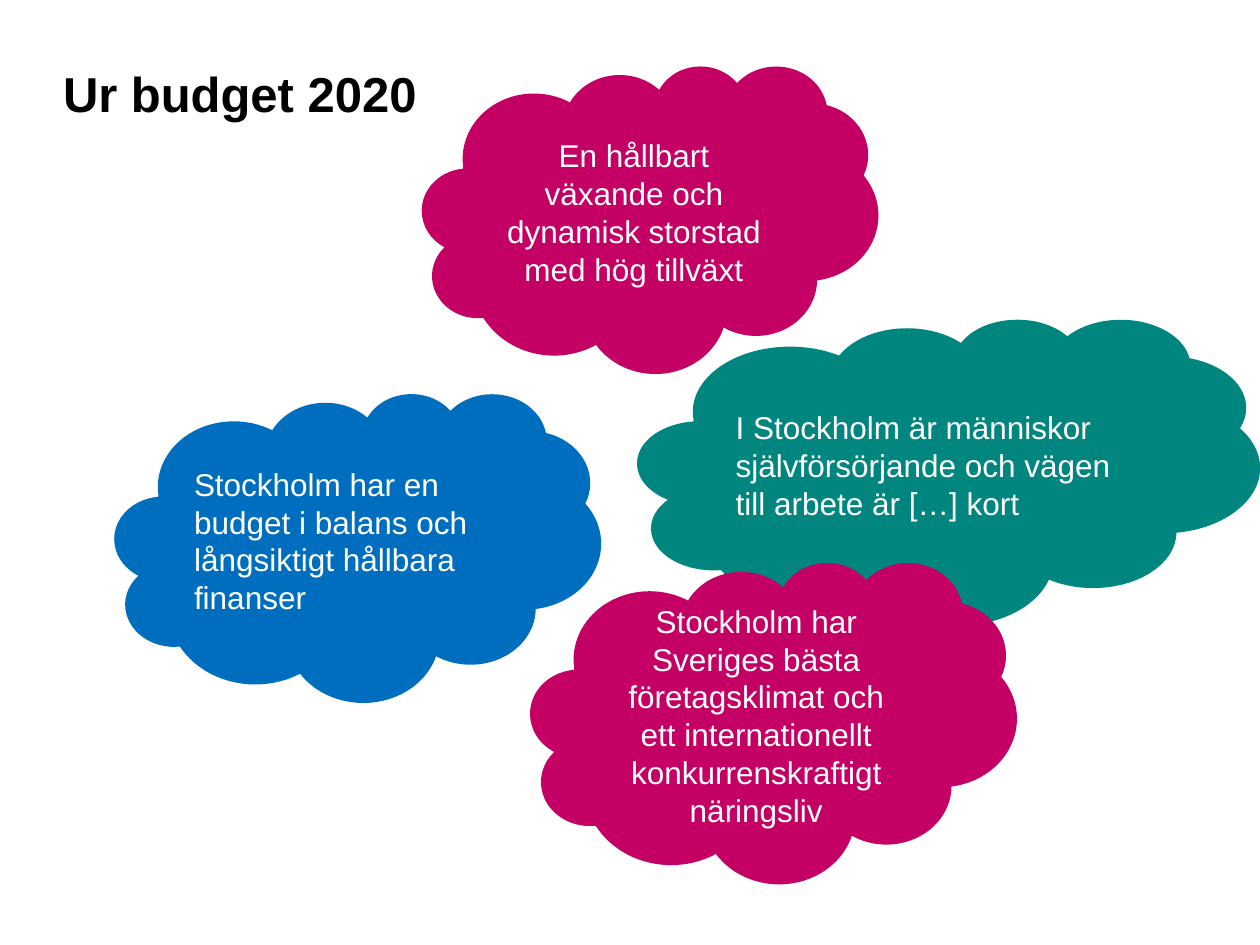
from pptx import Presentation
from pptx.dml.color import RGBColor
from pptx.enum.shapes import MSO_SHAPE
from pptx.enum.text import MSO_ANCHOR, PP_ALIGN
from pptx.util import Inches, Pt

TEAL, PINK, BLUE = "00867F", "C40064", "006EBF"

# Clouds from back to front: left, top, width, height, fill, alignment, text
CLOUDS = [
    (5.06, 2.53, 4.94, 2.43, TEAL, PP_ALIGN.LEFT,
     "I Stockholm är människor självförsörjande och vägen till arbete är […] kort"),
    (4.21, 4.46, 3.86, 2.55, PINK, PP_ALIGN.CENTER,
     "Stockholm har Sveriges bästa företagsklimat och ett internationellt "
     "konkurrenskraftigt näringsliv"),
    (0.91, 3.12, 3.86, 2.45, BLUE, PP_ALIGN.LEFT,
     "Stockholm har en budget i balans och långsiktigt hållbara finanser"),
    (3.35, 0.52, 3.62, 2.44, PINK, PP_ALIGN.CENTER,
     "En hållbart växande och dynamisk storstad med hög tillväxt"),
]


def rgb(color):
    return RGBColor.from_string(color)


def set_text(tf, text, size, color, align, anchor, bold=False):
    tf.text = text
    tf.word_wrap = True
    tf.vertical_anchor = anchor
    p = tf.paragraphs[0]
    p.alignment = align
    font = p.runs[0].font
    font.name = "Arial"
    font.size = Pt(size)
    font.bold = bold
    font.color.rgb = rgb(color)


def set_title(s, text):
    sp = s.shapes.title
    sp.left, sp.top = Inches(0.5), Inches(0.5)
    sp.width, sp.height = Inches(9), Inches(0.91)
    tf = sp.text_frame
    tf.margin_left = tf.margin_right = tf.margin_top = tf.margin_bottom = 0
    set_text(tf, text, 28, "000000", PP_ALIGN.LEFT, MSO_ANCHOR.TOP, bold=True)


def add_cloud(s, left, top, width, height, fill, align, text):
    sp = s.shapes.add_shape(MSO_SHAPE.CLOUD, Inches(left), Inches(top),
                            Inches(width), Inches(height))
    sp.shadow.inherit = False
    sp.fill.solid()
    sp.fill.fore_color.rgb = rgb(fill)
    sp.line.fill.background()
    set_text(sp.text_frame, text, 18, "FFFFFF", align, MSO_ANCHOR.MIDDLE)


def main():
    prs = Presentation()
    prs.slide_width, prs.slide_height = Inches(10), Inches(7.5)
    s = prs.slides.add_slide(prs.slide_layouts[5])  # title only
    set_title(s, "Ur budget 2020")
    for cloud in CLOUDS:
        add_cloud(s, *cloud)
    prs.save("out.pptx")


if __name__ == "__main__":
    main()
